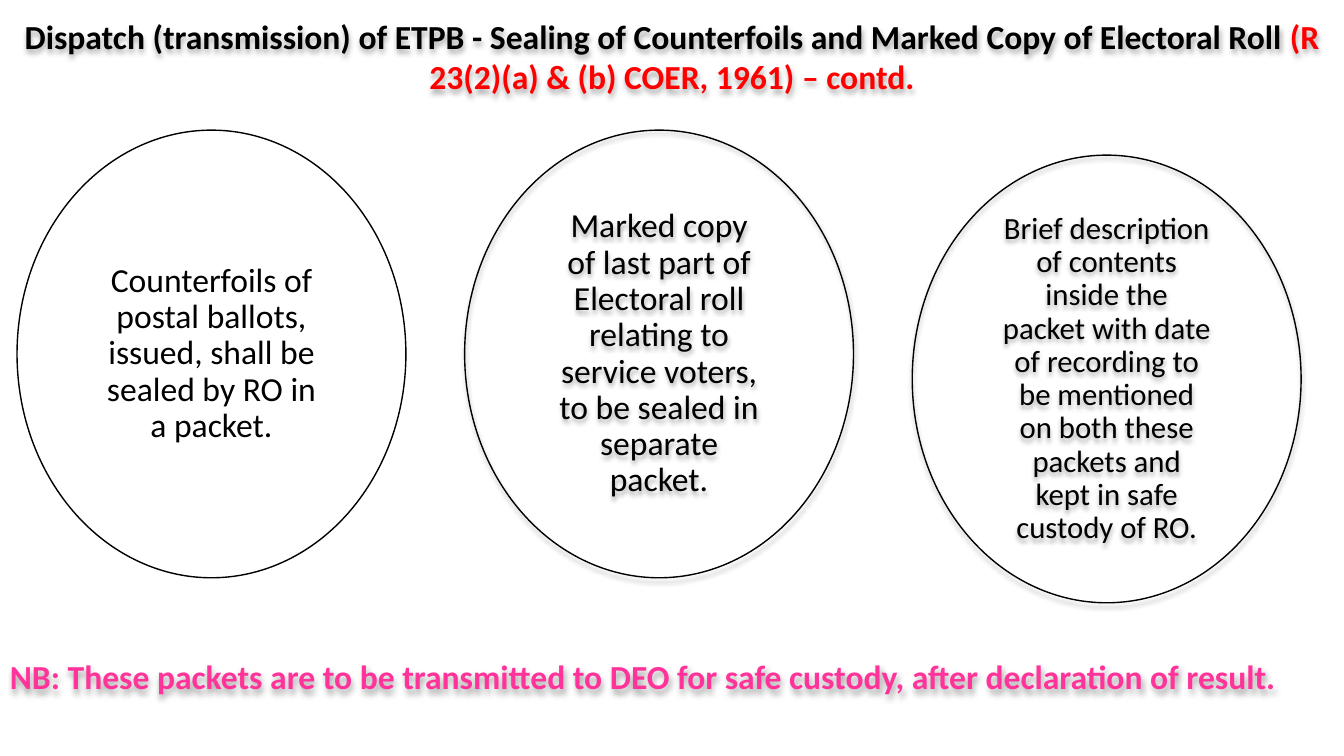
"""Build the slide on sealing counterfoils and the marked electoral roll."""
from lxml.etree import SubElement
from pptx import Presentation
from pptx.dml.color import RGBColor
from pptx.enum.shapes import MSO_SHAPE as Preset
from pptx.enum.text import MSO_ANCHOR as Anchor, MSO_AUTO_SIZE as AutoSize, PP_ALIGN as Align
from pptx.oxml.ns import qn
from pptx.util import Cm, Pt

COLORS = {"ink": "000000", "rule": "FF0000", "note": "FF3399"}
FONT = "Calibri"
SLIDE_WIDTH, SLIDE_HEIGHT = Cm(33.87), Cm(19.05)
OVAL_LEFT, OVAL_STEP = 0.43, 11.28
OVAL_WIDTH, OVAL_HEIGHT = 9.8, 11.28

TITLE = [
    ("Dispatch (transmission) of ETPB - Sealing of Counterfoils and Marked Copy of Electoral Roll ", "ink"),
    ("(R 23(2)(a) & (b) COER, 1961) – contd.", "rule"),
]
NOTE = [
    ("NB: These packets are to be transmitted to DEO for safe custody, after declaration of result.", "note"),
]
PACKETS = [
    ("Counterfoils of postal ballots, issued, shall be sealed by RO in a packet.", 3.28, 24, False),
    ("Marked copy of last part of Electoral roll relating to service voters, "
     "to be sealed in separate packet.", 3.28, 24, True),
    ("Brief description of contents inside the packet with date of recording to be mentioned "
     "on both these packets and kept in safe custody of RO.", 3.91, 22, True),
]


def color(key):
    return RGBColor.from_string(COLORS[key])


def format_run(run, key, size=24, bold=False):
    run.font.name = FONT
    run.font.size = Pt(size)
    run.font.bold = bold
    run.font.color.rgb = color(key)


def add_soft_shadow(shape):
    shape.shadow.inherit = False
    effects = shape._element.spPr.find(qn("a:effectLst"))
    shadow = SubElement(effects, qn("a:outerShdw"), blurRad=str(Pt(3.5)), dist=str(Pt(2.2)),
                        dir="5400000", rotWithShape="0")
    tint = SubElement(shadow, qn("a:srgbClr"), val=COLORS["ink"])
    SubElement(tint, qn("a:alpha"), val="32000")


def add_banner(slide, parts, top, height, align, anchor):
    banner = slide.shapes.add_textbox(0, Cm(top), SLIDE_WIDTH, Cm(height))
    frame = banner.text_frame
    frame.word_wrap = True
    frame.auto_size = AutoSize.SHAPE_TO_FIT_TEXT
    frame.vertical_anchor = anchor
    paragraph = frame.paragraphs[0]
    paragraph.alignment = align
    for text, key in parts:
        run = paragraph.add_run()
        run.text = text
        format_run(run, key, bold=True)
    add_soft_shadow(banner)


def add_packet(slide, index, text, top, size, shadowed):
    oval = slide.shapes.add_shape(Preset.OVAL, Cm(OVAL_LEFT + index * OVAL_STEP), Cm(top),
                                  Cm(OVAL_WIDTH), Cm(OVAL_HEIGHT))
    oval.shadow.inherit = False
    oval.fill.background()
    oval.line.color.rgb = color("ink")
    oval.line.width = Pt(1)
    if shadowed:
        add_soft_shadow(oval)
    frame = oval.text_frame
    frame.word_wrap = True
    frame.vertical_anchor = Anchor.MIDDLE
    frame.margin_left = frame.margin_right = Cm(0.83)
    frame.margin_top = frame.margin_bottom = Cm(0.08)
    frame.text = text
    paragraph = frame.paragraphs[0]
    paragraph.alignment = Align.CENTER
    paragraph.line_spacing = 0.9
    format_run(paragraph.runs[0], "ink", size)


def main():
    deck = Presentation()
    deck.slide_width, deck.slide_height = SLIDE_WIDTH, SLIDE_HEIGHT
    slide = deck.slides.add_slide(deck.slide_layouts[6])
    add_banner(slide, TITLE, 0.25, 2.31, Align.CENTER, Anchor.MIDDLE)
    add_banner(slide, NOTE, 16.41, 1.28, Align.LEFT, Anchor.TOP)
    for index, packet in enumerate(PACKETS):
        add_packet(slide, index, *packet)
    deck.save("out.pptx")


if __name__ == "__main__":
    main()
